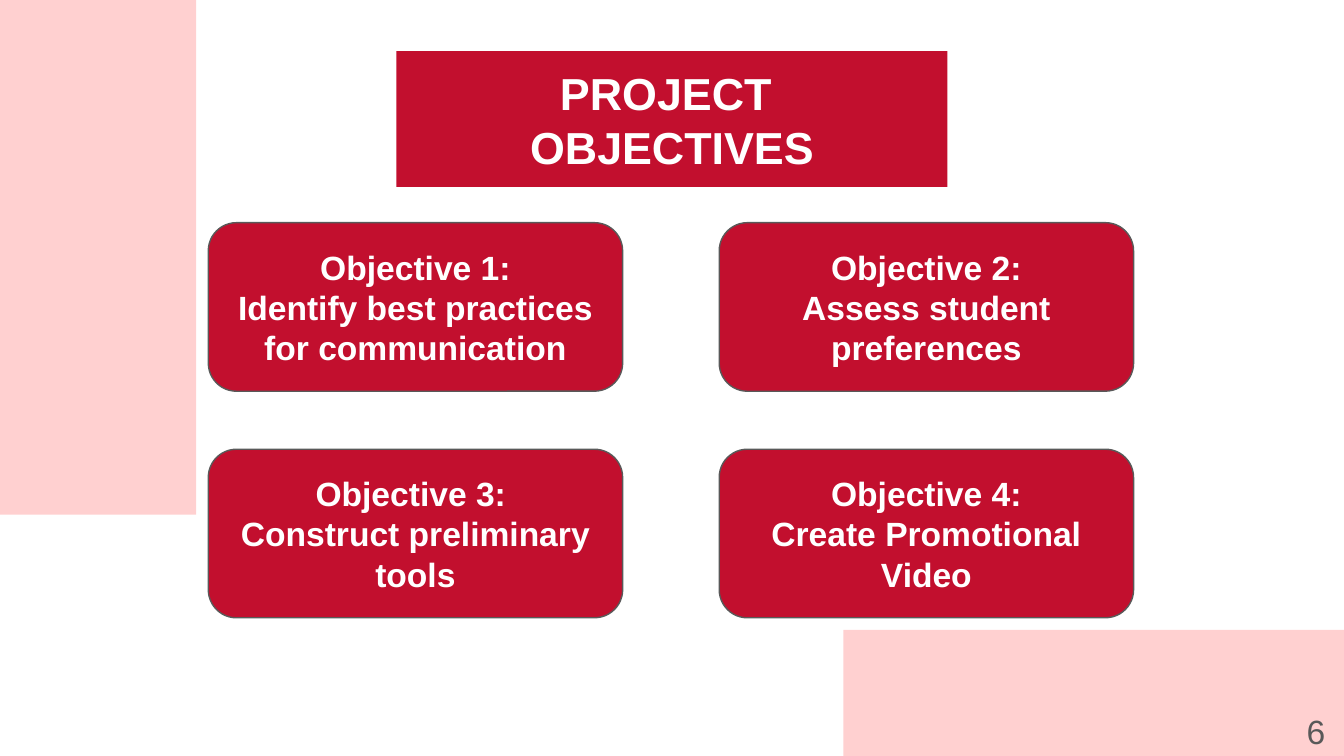
"""Build the project objectives slide."""
import pptx
import pptx.dml.color
import pptx.enum.shapes
import pptx.enum.text
import pptx.util

Pt = pptx.util.Pt
RGB = pptx.dml.color.RGBColor.from_string
SHAPE = pptx.enum.shapes.MSO_SHAPE
ALIGN = pptx.enum.text.PP_ALIGN
ANCHOR = pptx.enum.text.MSO_ANCHOR

TITLE = ["PROJECT ", "OBJECTIVES"]
OBJECTIVES = [
    ["Objective 1:", "Identify best practices for communication"],
    ["Objective 2:", "Assess student preferences"],
    ["Objective 3: ", "Construct preliminary tools"],
    ["Objective 4:", "Create Promotional", "Video"],
]
PAGE_NUMBER = ["6"]

THEME = {
    "font": "Arial", "red": "C20F2E", "pink": "FFD0D0", "gray": "595959",
    "white": "FFFFFF", "title_size": 24, "body_size": 18, "inset": 7.2,
}
SLIDE_W, SLIDE_H = 720, 405
TITLE_BOX = (212.4, 27.4, 295.2, 72.7)
NUMBER_BOX = (673.9, 373.7, 43.2, 31)
PANELS = [(0, 0, 105.1, 275.8), (451.8, 337.4, 268.2, 67.6)]
CARD_W, CARD_H = 222, 90.3
GRID_LEFT, GRID_TOP = 111.6, 119.3
COLUMN_STEP, ROW_STEP = 273.7, 121.4
COLUMNS = 2


def write(sp, lines, size, color, bold, align, anchor):
    tf = sp.text_frame
    tf.word_wrap = True
    tf.auto_size = pptx.enum.text.MSO_AUTO_SIZE.NONE
    tf.vertical_anchor = anchor
    tf.margin_left = tf.margin_right = Pt(THEME["inset"])
    tf.margin_top = tf.margin_bottom = Pt(THEME["inset"])
    tf.text = "\n".join(lines)
    for p in tf.paragraphs:
        p.alignment = align
        p.font.name = THEME["font"]
        p.font.size = Pt(size)
        p.font.bold = bold
        p.font.color.rgb = RGB(THEME[color])


def paint(sp, color):
    sp.fill.solid()
    sp.fill.fore_color.rgb = RGB(THEME[color])


def add_block(slide, kind, box, color):
    sp = slide.shapes.add_shape(kind, *map(Pt, box))
    sp.shadow.inherit = False
    paint(sp, color)
    sp.line.fill.background()
    return sp


def add_title(slide):
    sp = slide.shapes.title
    sp.left, sp.top, sp.width, sp.height = map(Pt, TITLE_BOX)
    paint(sp, "red")
    write(sp, TITLE, THEME["title_size"], "white", True, ALIGN.CENTER, ANCHOR.BOTTOM)


def add_card(slide, index, lines):
    row, column = divmod(index, COLUMNS)
    box = (GRID_LEFT + column * COLUMN_STEP, GRID_TOP + row * ROW_STEP, CARD_W, CARD_H)
    sp = add_block(slide, SHAPE.ROUNDED_RECTANGLE, box, "red")
    sp.line.color.rgb = RGB(THEME["gray"])
    sp.line.width = Pt(0.75)
    write(sp, lines, THEME["body_size"], "white", True, ALIGN.CENTER, ANCHOR.MIDDLE)


def main():
    prs = pptx.Presentation()
    prs.slide_width, prs.slide_height = Pt(SLIDE_W), Pt(SLIDE_H)
    slide = prs.slides.add_slide(prs.slide_layouts[5])
    add_title(slide)
    for box in PANELS:
        add_block(slide, SHAPE.RECTANGLE, box, "pink")
    sp = slide.shapes.add_textbox(*map(Pt, NUMBER_BOX))
    write(sp, PAGE_NUMBER, THEME["body_size"], "gray", False, ALIGN.RIGHT, ANCHOR.TOP)
    for index, lines in enumerate(OBJECTIVES):
        add_card(slide, index, lines)
    prs.save("out.pptx")


if __name__ == "__main__":
    main()
